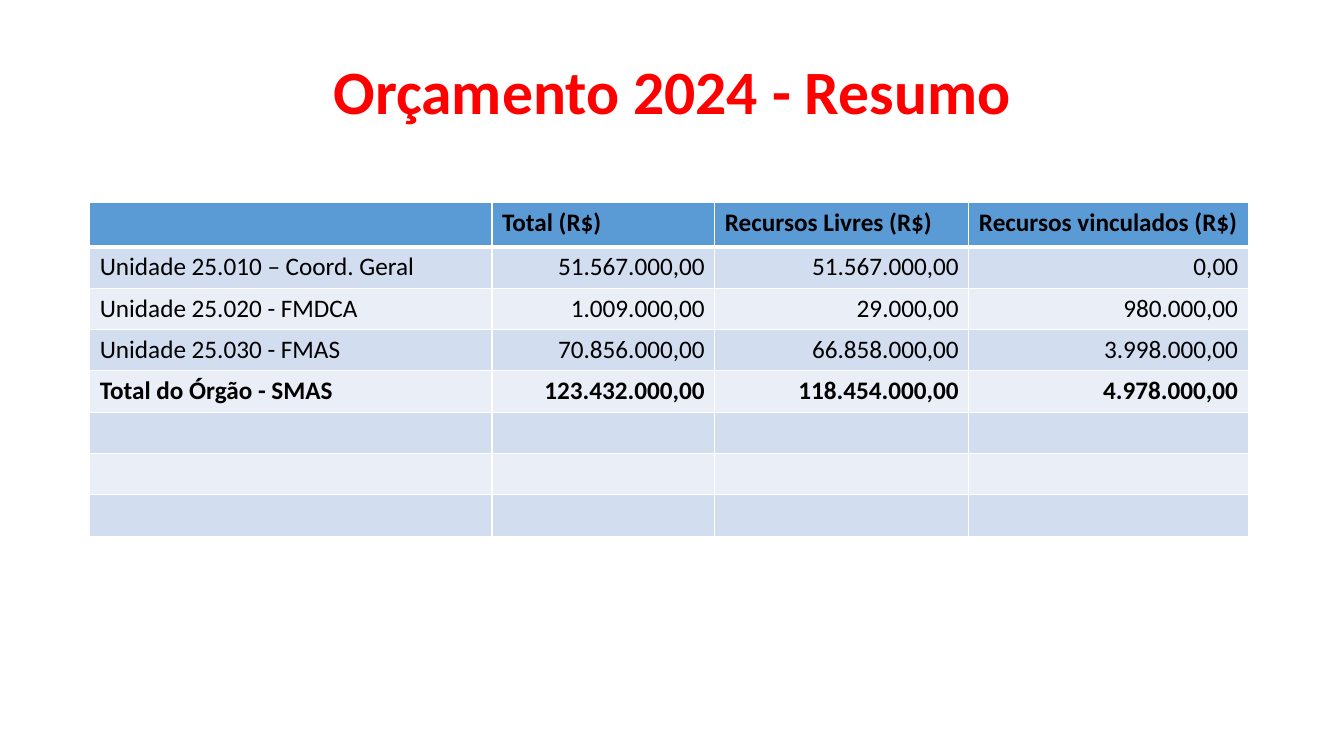
import dataclasses

import pptx
import pptx.dml.color
import pptx.enum.text
import pptx.oxml
import pptx.oxml.ns
import pptx.util
from pptx.util import Inches

ALIGN = pptx.enum.text.PP_ALIGN
ANCHOR = pptx.enum.text.MSO_ANCHOR


@dataclasses.dataclass(frozen=True)
class Theme:
    font: str = "Calibri"
    title_size: int = 44
    table_size: int = 18
    title: str = "FF0000"
    text: str = "000000"
    header: str = "5B9BD5"
    bands: tuple = ("D2DEEF", "EAEFF7")
    grid: str = "FFFFFF"
    grid_width: int = 1
    header_rule_width: int = 3


class SlideBuilder:
    def __init__(self, presentation, theme):
        self.theme = theme
        self.slide = presentation.slides.add_slide(presentation.slide_layouts[5])

    def add_run(self, paragraph, text, size, color, bold):
        run = paragraph.add_run()
        run.text = text
        run.font.name = self.theme.font
        run.font.size = pptx.util.Pt(size)
        run.font.bold = bold
        run.font.color.rgb = pptx.dml.color.RGBColor.from_string(color)

    def add_title(self, text, left, top, width, height):
        title = self.slide.shapes.title
        title.left, title.top = Inches(left), Inches(top)
        title.width, title.height = Inches(width), Inches(height)
        frame = title.text_frame
        frame.word_wrap = True
        frame.auto_size = pptx.enum.text.MSO_AUTO_SIZE.NONE
        frame.vertical_anchor = ANCHOR.MIDDLE
        heading = frame.paragraphs[0]
        heading.alignment = ALIGN.CENTER
        heading.line_spacing = 0.9
        self.add_run(heading, text, self.theme.title_size, self.theme.title, True)

    def set_borders(self, cell, top_width, bottom_width):
        properties = cell._tc.get_or_add_tcPr()
        side_width = self.theme.grid_width
        widths = {"L": side_width, "R": side_width, "T": top_width, "B": bottom_width}
        for side, width in widths.items():
            properties.append(pptx.oxml.parse_xml(
                f'<a:ln{side} {pptx.oxml.ns.nsdecls("a")} w="{pptx.util.Pt(width)}">'
                f'<a:solidFill><a:srgbClr val="{self.theme.grid}"/></a:solidFill>'
                f'</a:ln{side}>'))

    def fill_cell(self, cell, row, column, text, bold):
        theme = self.theme
        rule = theme.header_rule_width
        self.set_borders(cell,
                         rule if row == 1 else theme.grid_width,
                         rule if row == 0 else theme.grid_width)
        color = theme.header if row == 0 else theme.bands[(row - 1) % 2]
        cell.fill.solid()
        cell.fill.fore_color.rgb = pptx.dml.color.RGBColor.from_string(color)
        paragraph = cell.text_frame.paragraphs[0]
        paragraph.font.size = pptx.util.Pt(theme.table_size)
        paragraph.alignment = ALIGN.RIGHT if row and column else ALIGN.LEFT
        if text:
            self.add_run(paragraph, text, theme.table_size, theme.text, bold)

    def add_table(self, rows, bold_rows, left, top, column_widths, row_heights):
        table = self.slide.shapes.add_table(
            len(rows), len(column_widths), Inches(left), Inches(top),
            Inches(sum(column_widths)), Inches(sum(row_heights))).table
        for column, width in zip(table.columns, column_widths):
            column.width = Inches(width)
        for row, height in zip(table.rows, row_heights):
            row.height = Inches(height)
        for r, texts in enumerate(rows):
            for c, text in enumerate(texts):
                self.fill_cell(table.cell(r, c), r, c, text, r in bold_rows)


def main():
    presentation = pptx.Presentation()
    presentation.slide_width = Inches(13.33)
    presentation.slide_height = Inches(7.5)

    budget = [
        ("", "Total (R$)", "Recursos Livres (R$)", "Recursos vinculados (R$)"),
        ("Unidade 25.010 – Coord. Geral", "51.567.000,00", "51.567.000,00", "0,00"),
        ("Unidade 25.020 - FMDCA", "1.009.000,00", "29.000,00", "980.000,00"),
        ("Unidade 25.030 - FMAS", "70.856.000,00", "66.858.000,00", "3.998.000,00"),
        ("Total do Órgão - SMAS", "123.432.000,00", "118.454.000,00", "4.978.000,00"),
    ]
    total_row = len(budget) - 1
    budget += [("",) * 4] * 3

    summary = SlideBuilder(presentation, Theme())
    summary.add_title("Orçamento 2024 - Resumo", 0.92, 0.21, 11.5, 1.45)
    summary.add_table(budget, {0, total_row}, 0.89, 2.01,
                      [3.99, 2.21, 2.52, 2.77],
                      [0.44] + [0.41] * (len(budget) - 1))
    presentation.save("out.pptx")


if __name__ == "__main__":
    main()
